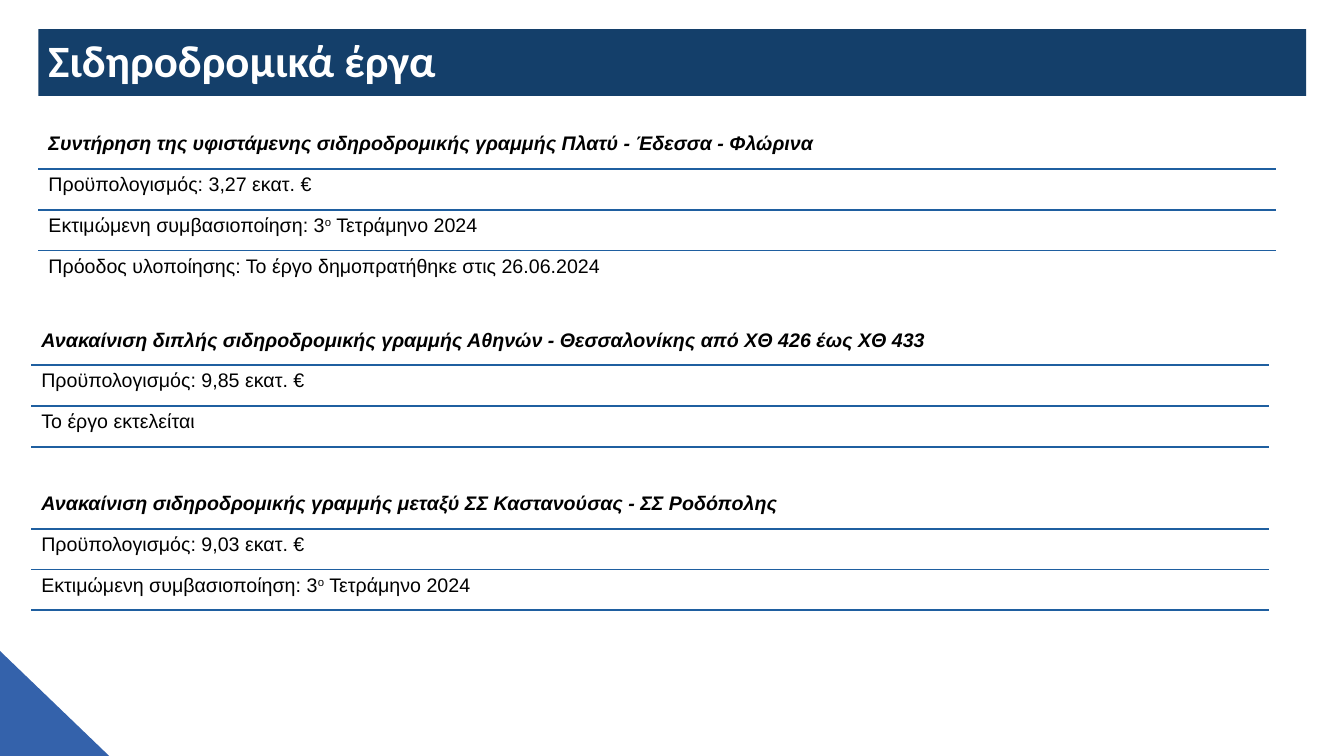
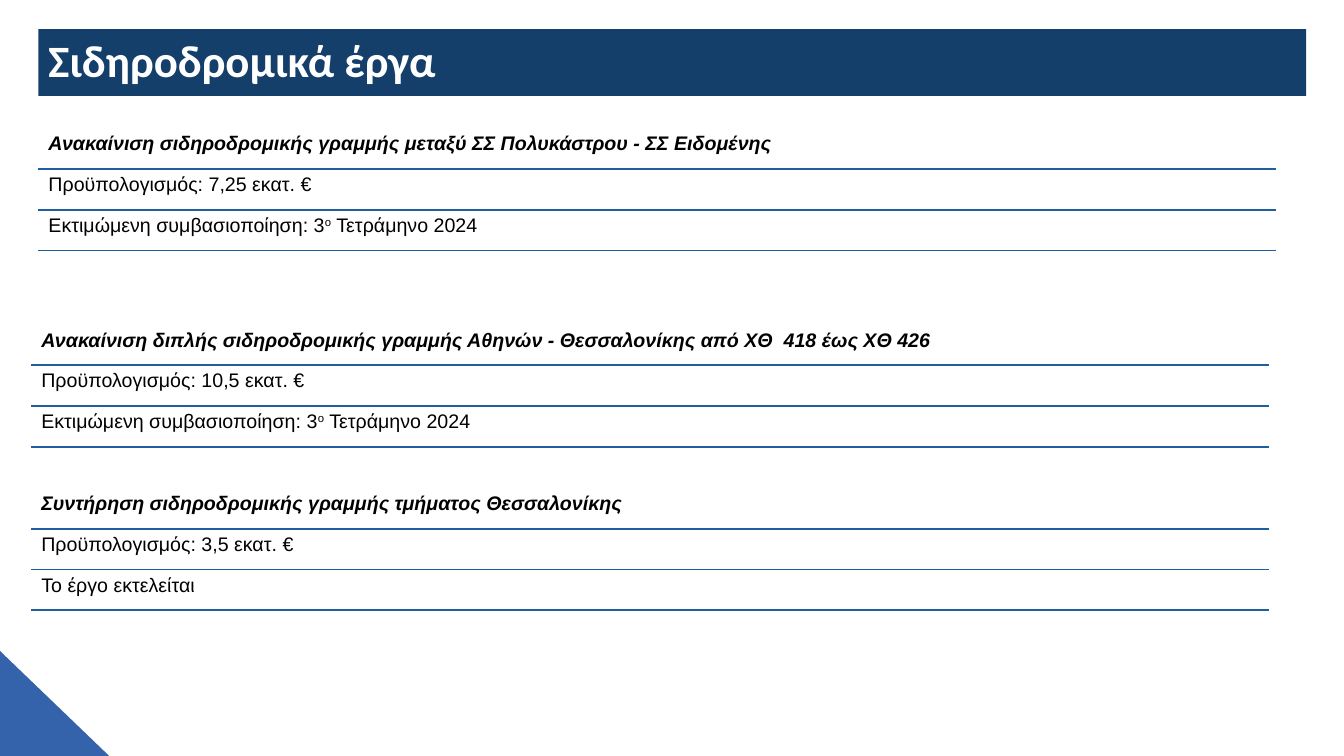
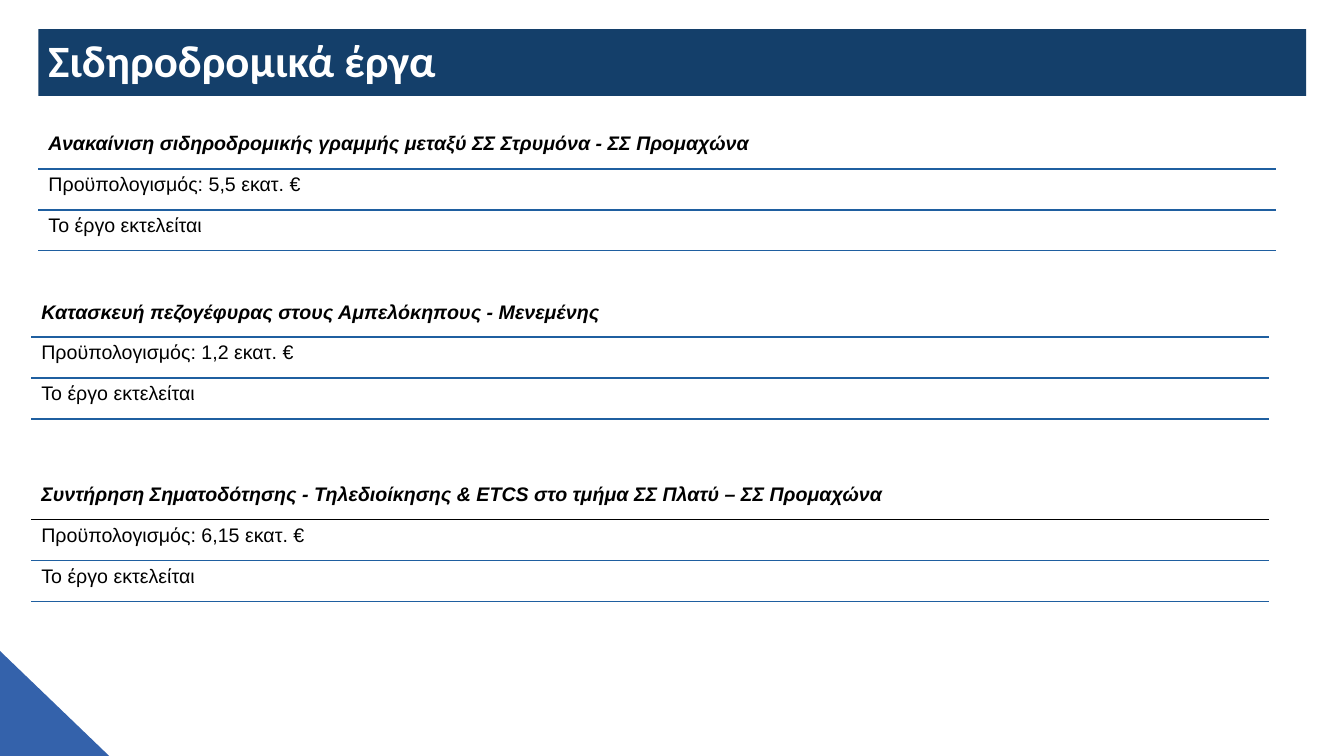
from lxml.etree import SubElement
from pptx import Presentation
from pptx.dml.color import RGBColor
from pptx.enum.shapes import MSO_SHAPE
from pptx.enum.text import MSO_ANCHOR, PP_ALIGN
from pptx.oxml.ns import qn
from pptx.util import Pt

COLOURS = {
    "band": "143F6A",
    "corner": "3462AB",
    "rule": "1F5FA0",
    "text": "000000",
    "heading": "FFFFFF",
}
TITLE_FONT = {"name": "Calibri", "size": Pt(32), "bold": True}
PROJECT_FONT = {"name": "Arial", "size": Pt(14), "bold": True, "italic": True}
DETAIL_FONT = {**PROJECT_FONT, "bold": False, "italic": False}

WIDTH, HEIGHT = 960, 540
TABLE_WIDTH, ROW_HEIGHT, ROWS = 884.2, 29.2, 4
FIRST_LEFT, OTHER_LEFT = 27.4, 22.3
RULE, HAIRLINE = ("rule", 1.5), ("text", 0.5)

TITLE = "Σιδηροδρομικά έργα"
CONTRACT = "Εκτιμώμενη συμβασιοποίηση: 3^ο^ Τετράμηνο 2024"
RUNNING = "Το έργο εκτελείται"

SLIDES = [
    [
        (91.4, "Συντήρηση της υφιστάμενης σιδηροδρομικής γραμμής Πλατύ - Έδεσσα - Φλώρινα",
         "3,27", [CONTRACT, "Πρόοδος υλοποίησης: Το έργο δημοπρατήθηκε στις 26.06.2024"], RULE),
        (231.6, "Ανακαίνιση διπλής σιδηροδρομικής γραμμής Αθηνών - Θεσσαλονίκης από ΧΘ 426 έως ΧΘ 433",
         "9,85", [RUNNING], RULE),
        (348.4, "Ανακαίνιση σιδηροδρομικής γραμμής μεταξύ ΣΣ Καστανούσας - ΣΣ Ροδόπολης",
         "9,03", [CONTRACT], RULE),
    ],
    [
        (91.4, "Ανακαίνιση σιδηροδρομικής γραμμής μεταξύ ΣΣ Πολυκάστρου - ΣΣ Ειδομένης",
         "7,25", [CONTRACT], RULE),
        (231.6, "Ανακαίνιση διπλής σιδηροδρομικής γραμμής Αθηνών - Θεσσαλονίκης από ΧΘ  418 έως ΧΘ 426",
         "10,5", [CONTRACT], RULE),
        (348.4, "Συντήρηση σιδηροδρομικής γραμμής τμήματος Θεσσαλονίκης",
         "3,5", [RUNNING], RULE),
    ],
    [
        (91.4, "Ανακαίνιση σιδηροδρομικής γραμμής μεταξύ ΣΣ Στρυμόνα - ΣΣ Προμαχώνα",
         "5,5", [RUNNING], RULE),
        (211.6, "Κατασκευή πεζογέφυρας στους Αμπελόκηπους - Μενεμένης",
         "1,2", [RUNNING], RULE),
        (342, "Συντήρηση Σηματοδότησης - Τηλεδιοίκησης & ETCS στο τμήμα ΣΣ Πλατύ – ΣΣ Προμαχώνα",
         "6,15", [RUNNING], HAIRLINE),
    ],
]


class Deck:
    """Holds the shared style and the slide being built."""

    def __init__(self):
        self.presentation = Presentation()
        self.presentation.slide_width = Pt(WIDTH)
        self.presentation.slide_height = Pt(HEIGHT)
        self.slide = None

    def new_slide(self, title):
        self.slide = self.presentation.slides.add_slide(self.presentation.slide_layouts[6])
        self.block(MSO_SHAPE.RIGHT_TRIANGLE, 0, 465, 78, 75, "corner")
        band = self.block(MSO_SHAPE.RECTANGLE, 27.4, 20.9, 905.6, 47.6, "band")
        band.text_frame.vertical_anchor = MSO_ANCHOR.MIDDLE
        heading = band.text_frame.paragraphs[0]
        heading.alignment = PP_ALIGN.LEFT
        heading.line_spacing = 0.9
        self.add_text(heading, title, TITLE_FONT, "heading")

    def block(self, outline, left, top, width, height, colour):
        block = self.slide.shapes.add_shape(outline, Pt(left), Pt(top), Pt(width), Pt(height))
        block.shadow.inherit = False
        block.fill.solid()
        block.fill.fore_color.rgb = RGBColor.from_string(COLOURS[colour])
        block.line.fill.background()
        return block

    def add_text(self, paragraph, text, style, colour):
        for index, part in enumerate(text.split("^")):
            run = paragraph.add_run()
            run.text = part
            for attribute, value in style.items():
                setattr(run.font, attribute, value)
            run.font.color.rgb = RGBColor.from_string(COLOURS[colour])
            if index % 2:
                run.font._element.set("baseline", "30000")

    def border(self, cell, side, rule):
        edge = SubElement(cell._tc.get_or_add_tcPr(), qn(f"a:ln{side}"))
        if rule is None:
            SubElement(edge, qn("a:noFill"))
            return
        colour, weight = rule
        edge.set("w", str(Pt(weight)))
        fill = SubElement(edge, qn("a:solidFill"))
        SubElement(fill, qn("a:srgbClr")).set("val", COLOURS[colour])

    def project(self, left, top, name, budget, details, first_rule):
        table = self.slide.shapes.add_table(
            ROWS, 1, Pt(left), Pt(top), Pt(TABLE_WIDTH), Pt(ROW_HEIGHT * ROWS)).table
        table.first_row = table.horz_banding = False
        lines = [name, f"Προϋπολογισμός: {budget} εκατ. €", *details]
        rules = [None, first_rule, RULE, RULE, None]
        for row in range(ROWS):
            cell = table.cell(row, 0)
            edges = {"L": None, "R": None, "T": rules[row], "B": rules[row + 1]}
            for side, rule in edges.items():
                self.border(cell, side, rule)
            cell.fill.background()
            if row < len(lines):
                style = DETAIL_FONT if row else PROJECT_FONT
                self.add_text(cell.text_frame.paragraphs[0], lines[row], style, "text")


def main():
    deck = Deck()
    for projects in SLIDES:
        deck.new_slide(TITLE)
        for index, project in enumerate(projects):
            deck.project(OTHER_LEFT if index else FIRST_LEFT, *project)
    deck.presentation.save("out.pptx")


if __name__ == "__main__":
    main()
